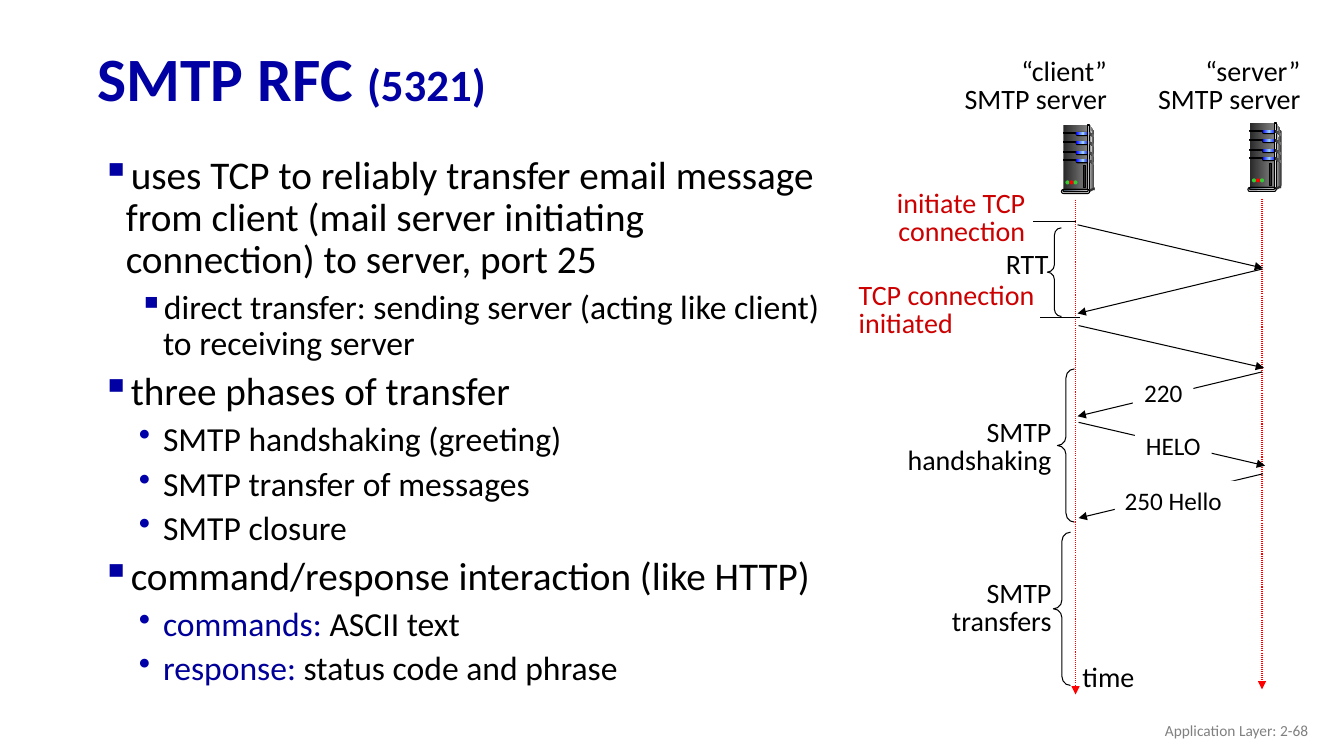
"""Build the SMTP RFC slide: protocol notes beside a client/server timing diagram."""
from dataclasses import dataclass
from typing import Any, NamedTuple

from lxml.etree import SubElement
from pptx import Presentation
from pptx.dml.color import RGBColor
from pptx.enum.dml import MSO_LINE
from pptx.enum.shapes import MSO_CONNECTOR, MSO_SHAPE as Preset
from pptx.enum.text import MSO_ANCHOR as Anchor, MSO_AUTO_SIZE as Fit, PP_ALIGN as Align
from pptx.oxml.ns import qn
from pptx.util import Emu, Inches, Pt

COLORS = {
    "title": "0000A3", "square": "0000A3", "dot": "0000A8", "term": "000099",
    "ink": "000000", "event": "CC0000", "axis": "FF0000", "footer": "808080",
    "paper": "FFFFFF", "case": "333333", "dark": "292929", "mid": "808080",
    "shine": "F8F8F8", "pale": "DDDDDD", "blue": "0000FF", "sky": "99CCFF",
    "slate": "44546A", "mist": "E7E6E6", "go": "33CC33", "stop": "FF0000",
}
FONT = "Calibri"
CELL = Inches(0.1)
COLUMNS, ROWS = 133.33, 75
HAIRLINE = Pt(0.75)
VENT_ROWS = (0.7, 1.6, 2.6, 3.4)
LAMPS = ("go", "stop", "go")


class Area(NamedTuple):
    column: float
    row: float
    columns: float
    rows: float


class Words(NamedTuple):
    text: str
    size: float
    color: str = "ink"
    bold: bool = False


@dataclass
class Label:
    area: Area
    lines: tuple[str, ...]
    size: float = 20
    color: str = "ink"
    align: Any = Align.LEFT
    wrap: bool = False
    spacing: float = 0.85
    anchor: Any = Anchor.TOP
    fill: str = ""


@dataclass
class Stroke:
    start: tuple[float, float]
    end: tuple[float, float]
    color: str = "ink"
    dotted: bool = False
    arrow: bool = True


@dataclass
class Point:
    words: tuple[Words, ...]
    mark: str = "▪"
    level: int = 0


def cells(count: float) -> Emu:
    return Emu(round(count * CELL))


def rgb(name: str) -> RGBColor:
    return RGBColor.from_string(COLORS[name])


def put(target: Any, formats: dict[str, Any]) -> None:
    for key, value in formats.items():
        setattr(target, key, value)


def write(paragraph: Any, words: tuple[Words, ...]) -> None:
    for part in words:
        run = paragraph.add_run()
        run.text = part.text
        put(run.font, {"name": FONT, "size": Pt(part.size), "bold": part.bold})
        run.font.color.rgb = rgb(part.color)


def paint(shape: Any, tones: tuple[str, ...], outlined: bool = False) -> None:
    shape.shadow.inherit = False
    if not tones:
        shape.fill.background()
    elif len(tones) == 1:
        shape.fill.solid()
        shape.fill.fore_color.rgb = rgb(tones[0])
    else:
        shape.fill.gradient()
        shape.fill.gradient_angle = 0
        stops = shape.element.spPr.find(".//" + qn("a:gsLst"))
        stops.clear()
        for index, tone in enumerate(tones):
            stop = SubElement(stops, qn("a:gs"), pos=str(100000 * index // (len(tones) - 1)))
            SubElement(stop, qn("a:srgbClr"), val=COLORS[tone])
    if outlined:
        shape.line.color.rgb = rgb("ink")
        shape.line.width = HAIRLINE
    else:
        shape.line.fill.background()


def add_label(shapes: Any, label: Label) -> None:
    place = [cells(length) for length in label.area]
    if label.fill:
        box = shapes.add_shape(Preset.RECTANGLE, *place)
        paint(box, (label.fill,))
    else:
        box = shapes.add_textbox(*place)
    frame = box.text_frame
    put(frame, {"word_wrap": label.wrap, "auto_size": Fit.SHAPE_TO_FIT_TEXT,
                "vertical_anchor": label.anchor})
    for index, line in enumerate(label.lines):
        paragraph = frame.add_paragraph() if index else frame.paragraphs[0]
        put(paragraph, {"alignment": label.align, "line_spacing": label.spacing})
        write(paragraph, (Words(line, label.size, label.color),))


def add_stroke(shapes: Any, stroke: Stroke) -> None:
    ends = [cells(length) for length in (*stroke.start, *stroke.end)]
    connector = shapes.add_connector(MSO_CONNECTOR.STRAIGHT, *ends)
    connector.line.color.rgb = rgb(stroke.color)
    connector.line.width = HAIRLINE
    if stroke.dotted:
        connector.line.dash_style = MSO_LINE.ROUND_DOT
    properties = connector.element.spPr
    if stroke.arrow:
        SubElement(properties.find(qn("a:ln")), qn("a:tailEnd"), type="triangle")
    SubElement(properties, qn("a:effectLst"))


def add_brace(shapes: Any, area: Area) -> None:
    brace = shapes.add_shape(Preset.LEFT_BRACE, *[cells(length) for length in area])
    brace.adjustments[0] = 0.52
    paint(brace, (), outlined=True)


def add_points(shapes: Any, area: Area, points: list[Point]) -> None:
    frame = shapes.add_textbox(*[cells(length) for length in area]).text_frame
    frame.word_wrap = True
    for index, point in enumerate(points):
        paragraph = frame.add_paragraph() if index else frame.paragraphs[0]
        put(paragraph, {"level": point.level, "line_spacing": 0.9,
                        "space_before": Pt(6 if index else 0)})
        properties = paragraph._p.get_or_add_pPr()
        properties.set("marL", str(cells(7.6 if point.level else 3.9)))
        properties.set("indent", str(cells(-2.4)))
        tint = SubElement(properties, qn("a:buClr"))
        SubElement(tint, qn("a:srgbClr"), val=COLORS["square" if point.mark == "▪" else "dot"])
        SubElement(properties, qn("a:buChar"), char=point.mark)
        write(paragraph, point.words)


def add_server(slide_shapes: Any, column: float, row: float) -> None:
    shapes = slide_shapes.add_group_shape().shapes

    def part(preset: Any, area: Area, *tones: str, outlined: bool = False) -> None:
        place = (column + area.column, row + area.row, area.columns, area.rows)
        shape = shapes.add_shape(preset, *[cells(length) for length in place])
        if preset == Preset.ROUNDED_RECTANGLE:
            shape.adjustments[0] = 0.5
        paint(shape, tones, outlined)

    def panel(corners: list[tuple[float, float]], *tones: str) -> None:
        spots = [(cells(column + x), cells(row + y)) for x, y in corners]
        outline = shapes.build_freeform(*spots[0])
        outline.add_line_segments(spots[1:], close=True)
        paint(outline.convert_to_shape(), tones)

    bar, pill, disc = Preset.RECTANGLE, Preset.ROUNDED_RECTANGLE, Preset.OVAL
    panel([(2.8, 0), (3.3, 0.8), (3.3, 6.2), (2.6, 6.5)], "pale", "case")
    part(bar, Area(0.2, 0, 2.4, 6.5), "dark", "mid")
    panel([(2.8, 0.4), (3.1, 0.9), (2.85, 3.8), (2.8, 6.4)], "mid", "shine")
    for vent in VENT_ROWS:
        part(bar, Area(0.2, vent, 1.4, 0.1), "ink", outlined=True)
        part(pill, Area(1.4, vent, 1.4, 0.4), "ink")
        part(pill, Area(1.45, vent, 1.3, 0.3), "blue", "sky", "blue")
    part(bar, Area(2.6, 0, 0.2, 6.5), "case", "pale", "case", outlined=True)
    for vent in VENT_ROWS:
        panel([(2.7, vent), (3.3, vent + 0.35), (3.3, vent + 0.55), (2.7, vent + 0.25)],
              "dark", "mid")
    part(disc, Area(3.2, 6.2, 0.1, 0.3), "case")
    panel([(2.7, 6.4), (2.7, 6.7), (3.3, 6.4), (3.3, 6.2)], "case")
    part(pill, Area(0, 6.4, 2.8, 0.4), "pale", outlined=True)
    part(pill, Area(0.15, 6.4, 2.5, 0.2), "slate", "mist", outlined=True)
    for index, lamp in enumerate(LAMPS):
        part(disc, Area(0.4 + 0.4 * index, 5.5, 0.4, 0.4), lamp)
    part(bar, Area(2.15, 4, 0.2, 2.2), "dark", outlined=True)


POINTS = [
    Point((Words("uses TCP to reliably transfer email message from client "
                 "(mail server initiating connection) to server, port 25", 28),)),
    Point((Words("direct transfer: sending server (acting like client) "
                 "to receiving server", 24),), level=1),
    Point((Words("three phases of transfer", 28),)),
    *[Point((Words(phase, 24),), "•", 1) for phase in
      ("SMTP handshaking (greeting)", "SMTP transfer of messages", "SMTP closure")],
    Point((Words("command/response interaction (like HTTP)", 28),)),
    *[Point((Words(term, 24, "term"), Words(meaning, 24)), "•", 1) for term, meaning in
      (("commands:", " ASCII text"), ("response:", " status code and phrase"))],
]
SETUP_STROKES = [
    Stroke((106.7, 19.8), (106.7, 68.9), "axis", dotted=True),
    Stroke((125.2, 19.7), (125.2, 68.4), "axis", dotted=True),
    Stroke((106.9, 22.3), (125.3, 26.6)),
    Stroke((125.2, 26.7), (106.9, 31.1)),
    Stroke((107, 32.3), (125.4, 36.5)),
    Stroke((102.5, 22), (106.7, 22), arrow=False),
    Stroke((103.2, 31.5), (107.1, 31.5), arrow=False),
]
SETUP_LABELS = [
    Label(Area(87.8, 18.4, 14.9, 6.8), ("initiate TCP", "connection"), color="event",
          align=Align.RIGHT),
    Label(Area(98.8, 24.5, 6.3, 3.9), ("RTT",)),
    Label(Area(106.4, 65.4, 7.3, 3.9), ("time",)),
    Label(Area(84.2, 27.5, 24, 6.8), ("TCP connection", "initiated"), color="event", wrap=True),
    *[Label(Area(column, 5.3, 16.9, 6.8), (role, "SMTP server"), align=Align.RIGHT, wrap=True)
      for column, role in ((93.9, "“client”"), (113.1, "“server”"))],
    Label(Area(100.8, 70.5, 30, 4), ("Application Layer: 2-68",), 11, "footer", Align.RIGHT,
          True, 1, Anchor.MIDDLE),
]
HANDSHAKE_STROKES = [
    Stroke((125.2, 36.9), (106.9, 41.3)),
    Stroke((107, 41.9), (125.5, 46.2)),
    Stroke((125.3, 47), (107, 51.4)),
]
HANDSHAKE_LABELS = [
    Label(area, (reply,), 18, align=align, wrap=True, spacing=1, fill="paper")
    for area, reply, align in (
        (Area(112.4, 36.9, 6, 4), "220", Align.CENTER),
        (Area(110.6, 47.7, 12.3, 4), "250 Hello", Align.LEFT),
        (Area(112.6, 42.2, 7.6, 4), "HELO", Align.CENTER))
]
PHASES = [
    (Area(104.9, 36.6, 1.7, 15.2), 41.1, "SMTP handshaking", HANDSHAKE_STROKES, HANDSHAKE_LABELS),
    (Area(104.5, 52.8, 1.7, 15.2), 57.1, "SMTP transfers", [], []),
]


def main() -> None:
    deck = Presentation()
    put(deck, {"slide_width": cells(COLUMNS), "slide_height": cells(ROWS)})
    shapes = deck.slides.add_slide(deck.slide_layouts[6]).shapes
    heading = shapes.add_textbox(*[cells(n) for n in Area(8.7, 3.2, 115, 9.8)]).text_frame
    put(heading, {"word_wrap": True, "vertical_anchor": Anchor.MIDDLE})
    heading.paragraphs[0].line_spacing = 0.9
    write(heading.paragraphs[0], (Words("SMTP RFC ", 44, "title", True),
                                  Words("(5321)", 32, "title", True)))
    add_points(shapes, Area(7.6, 14.9, 75.3, 50.8), POINTS)
    for stroke in SETUP_STROKES:
        add_stroke(shapes, stroke)
    add_brace(shapes, Area(103.9, 22.6, 1.4, 8.8))
    for column, row in ((123.8, 12.2), (105.3, 12.4)):
        add_server(shapes, column, row)
    for brace, name_row, name, strokes, replies in PHASES:
        phase = shapes.add_group_shape().shapes
        for stroke in strokes:
            add_stroke(phase, stroke)
        for reply in replies:
            add_label(phase, reply)
        add_brace(phase, brace)
        add_label(phase, Label(Area(87.1, name_row, 18.2, 6.8), (name,), align=Align.RIGHT,
                               wrap=True))
    for label in SETUP_LABELS:
        add_label(shapes, label)
    deck.save("out.pptx")


if __name__ == "__main__":
    main()
